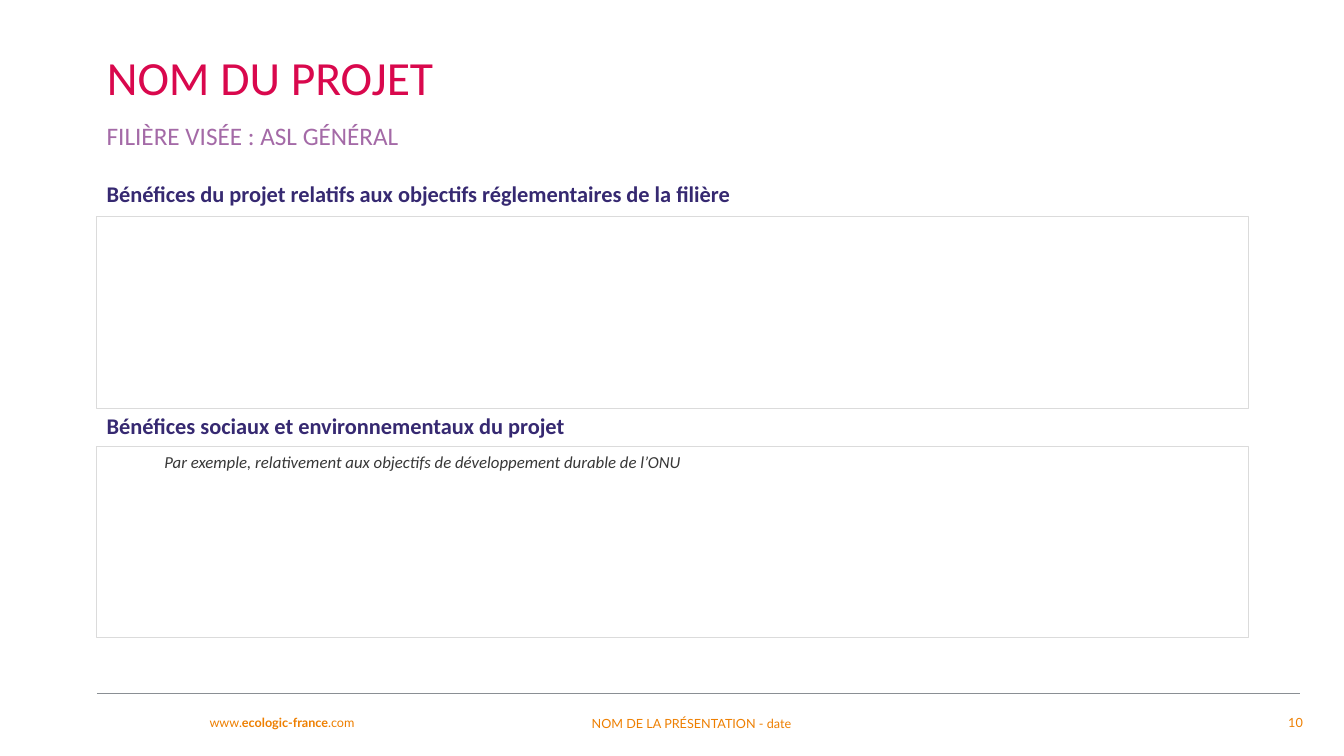
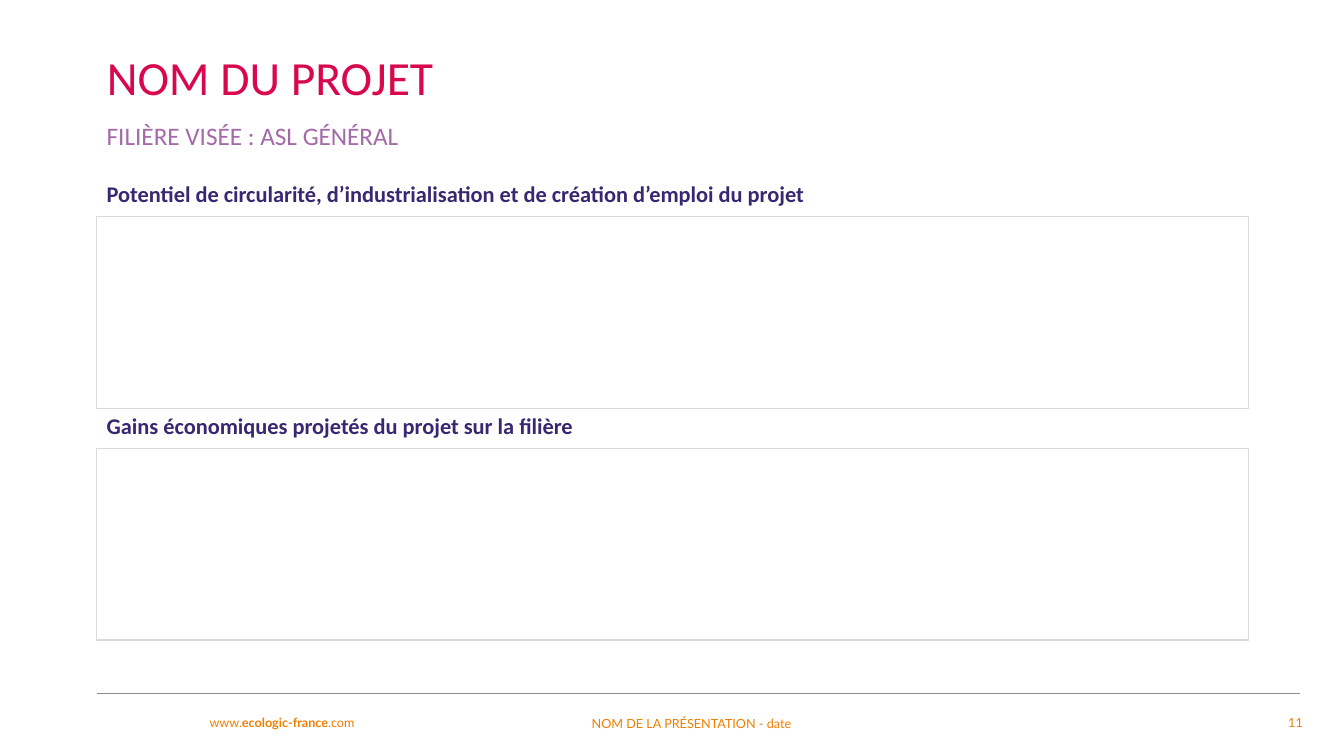
from pptx import Presentation
from pptx.dml.color import RGBColor
from pptx.enum import shapes, text
from pptx.oxml import ns
from pptx.util import Inches, Pt
from lxml import etree

# Shared colours and fonts
PINK = RGBColor(0xD9, 0x08, 0x4D)
MAUVE = RGBColor(0xA4, 0x6A, 0xA7)
NAVY = RGBColor(0x36, 0x29, 0x71)
ORANGE = RGBColor(0xEE, 0x7F, 0x00)
DARK = RGBColor(0x37, 0x37, 0x37)
PALE = RGBColor(0xDB, 0xDB, 0xDB)
GREY = RGBColor(0x8A, 0x8F, 0x94)
BODY, FOOT = "Calibri", "Lato"

# Shared grid, in inches
LEFT, WIDE = 0.96, 11.42
HEAD, BOX = 0.4, 1.9

TITLE = "NOM DU PROJET"
SECTOR = "FILIÈRE VISÉE : ASL GÉNÉRAL"
HINT = ("Par exemple, relativement aux objectifs de développement "
        "durable de l’ONU")

# Page number, then heading, heading top, box top and hint of each section
PAGES = [
    (10, [
        ("Bénéfices du projet relatifs aux objectifs réglementaires "
         "de la filière", 1.74, 2.15, None),
        ("Bénéfices sociaux et environnementaux du projet",
         4.04, 4.43, HINT),
    ]),
    (11, [
        ("Potentiel de circularité, d’industrialisation et de création "
         "d’emploi du projet", 1.74, 2.15, None),
        ("Gains économiques projetés du projet sur la filière",
         4.04, 4.45, None),
    ]),
]


def place(shape, x, y, w, h):
    shape.left, shape.top = Inches(x), Inches(y)
    shape.width, shape.height = Inches(w), Inches(h)


def write(shape, runs, size, color, font=BODY, align=text.PP_ALIGN.LEFT,
          anchor=text.MSO_ANCHOR.TOP, italic=False, lead=1.0):
    """Fill a shape with one paragraph; runs are (words, bold) pairs."""
    frame = shape.text_frame
    frame.word_wrap = True
    frame.auto_size = text.MSO_AUTO_SIZE.NONE
    frame.vertical_anchor = anchor
    para = frame.paragraphs[0]
    para.alignment, para.line_spacing = align, lead
    for words, bold in runs:
        run = para.add_run()
        run.text = words
        run.font.name, run.font.size = font, Pt(size)
        run.font.bold, run.font.italic = bold, italic
        run.font.color.rgb = color
    return para


def label(slide, x, y, w, h, runs, size, color, **style):
    box = slide.shapes.add_textbox(*map(Inches, (x, y, w, h)))
    write(box, runs, size, color, **style)


def frame_box(slide, y, hint):
    box = slide.shapes.add_shape(
        shapes.MSO_SHAPE.RECTANGLE, *map(Inches, (LEFT, y, WIDE, BOX)))
    box.shadow.inherit = False
    box.fill.background()
    box.line.color.rgb, box.line.width = PALE, Pt(0.75)
    if hint:
        box.text_frame.margin_left = 0
        para = write(box, [(hint, False)], 12, DARK, italic=True,
                     align=text.PP_ALIGN.JUSTIFY)
        props = para._p.get_or_add_pPr()
        props.set("marL", str(Inches(0.67)))
        props.set("indent", "0")


def footer(slide, page):
    rule = slide.shapes.add_connector(
        shapes.MSO_CONNECTOR.STRAIGHT,
        *map(Inches, (LEFT, 6.88, 12.89, 6.88)))
    rule.line.color.rgb, rule.line.width = GREY, Pt(0.75)
    etree.SubElement(rule._element.spPr, ns.qn("a:effectLst"))
    site = [("www.", False), ("ecologic-france", True), (".com", False)]
    label(slide, 1.98, 7.04, 1.78, 0.25, site, 9, ORANGE, font=FOOT)
    label(slide, 5.77, 7.05, 5.24, 0.25,
          [("NOM DE LA PRÉSENTATION - date", False)], 9, ORANGE, font=FOOT)
    label(slide, 12.38, 7.04, 0.64, 0.26, [(str(page), False)], 9, ORANGE,
          font=FOOT, align=text.PP_ALIGN.RIGHT)


def header(slide):
    title = slide.shapes.title
    place(title, LEFT, 0.49, WIDE, 0.62)
    write(title, [(TITLE, False)], 34, PINK, lead=0.9)
    label(slide, LEFT, 1.14, WIDE, HEAD, [(SECTOR, False)], 18, MAUVE)


def main():
    prs = Presentation()
    prs.slide_width, prs.slide_height = Inches(13.33), Inches(7.5)
    for page, parts in PAGES:
        slide = prs.slides.add_slide(prs.slide_layouts[5])
        footer(slide, page)
        header(slide)
        # Headings and their answer boxes
        for head, top, box_top, hint in parts:
            label(slide, LEFT, top, WIDE, HEAD, [(head, True)], 16, NAVY,
                  anchor=text.MSO_ANCHOR.MIDDLE, lead=0.9)
            frame_box(slide, box_top, hint)
    prs.save("out.pptx")


if __name__ == "__main__":
    main()
